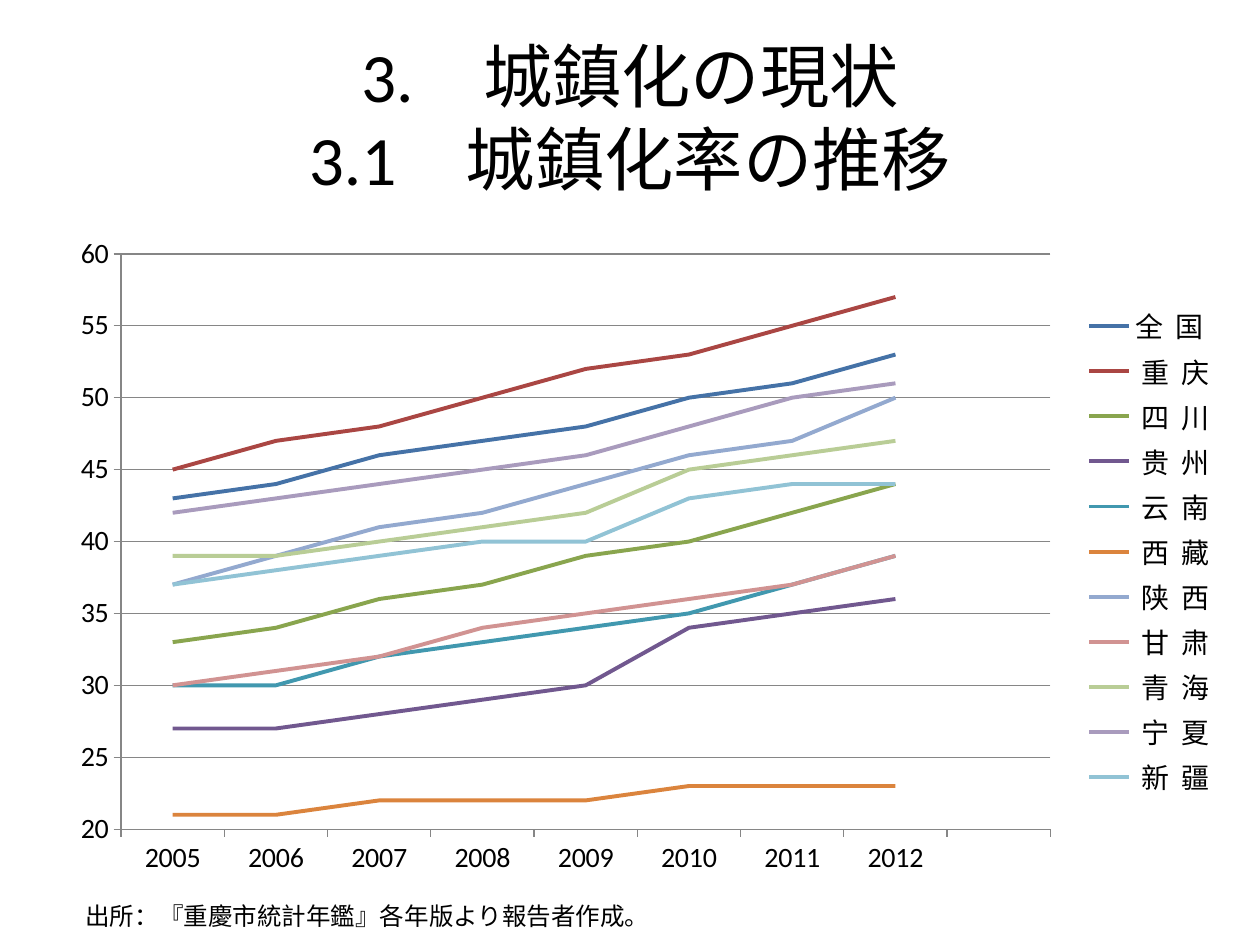
import pptx
import pptx.chart.data
import pptx.dml.color
import pptx.enum.chart
import pptx.enum.text
import pptx.oxml
import pptx.oxml.ns
import pptx.util

TITLE = "3.\u3000城鎮化の現状\v3.1\u3000城鎮化率の推移"
SOURCE = "出所：『重慶市統計年鑑』各年版より報告者作成。"
YEARS = [str(year) for year in range(2005, 2013)] + [""]
RATES = [
    ("全  国", "4572A7", (43, 44, 46, 47, 48, 50, 51, 53)),
    (" 重  庆", "AA4643", (45, 47, 48, 50, 52, 53, 55, 57)),
    (" 四  川", "89A54E", (33, 34, 36, 37, 39, 40, 42, 44)),
    (" 贵  州", "71588F", (27, 27, 28, 29, 30, 34, 35, 36)),
    (" 云  南", "4198AF", (30, 30, 32, 33, 34, 35, 37, 39)),
    (" 西  藏", "DB843D", (21, 21, 22, 22, 22, 23, 23, 23)),
    (" 陕  西", "93A9CF", (37, 39, 41, 42, 44, 46, 47, 50)),
    (" 甘  肃", "D19392", (30, 31, 32, 34, 35, 36, 37, 39)),
    (" 青  海", "B9CD96", (39, 39, 40, 41, 42, 45, 46, 47)),
    (" 宁  夏", "A99BBD", (42, 43, 44, 45, 46, 48, 50, 51)),
    (" 新  疆", "91C3D5", (37, 38, 39, 40, 40, 43, 44, 44)),
]

THEME = dict(font="Calibri", text="000000", axis="868686",
             title=39.6, chart=16, note=14, line=2.25, hair=0.75)
WIDTH, HEIGHT = 10, 7.5
MARGIN = WIDTH * 0.05
TITLE_BOX = (MARGIN, HEIGHT * 0.04, WIDTH - 2 * MARGIN, 1.25)
CHART_BOX = (MARGIN, 1.75, 9.22, 5.31)
NOTE_BOX = (0.58, 7.1, 8.66, 0.34)
PLOT_SHARE = (0.05, 0.05, 0.8, 0.86)
LEGEND_SHARE = (0.87, 0.12, 0.13, 0.75)


def inches(box):
    return [pptx.util.Inches(v) for v in box]


def color(code):
    return pptx.dml.color.RGBColor.from_string(code)


def style_font(font, size):
    font.name = THEME["font"]
    font.size = pptx.util.Pt(size)
    font.color.rgb = color(THEME["text"])


def style_line(line, code, width):
    line.color.rgb = color(code)
    line.width = pptx.util.Pt(width)


def add_text(s, box, text, size, align, anchor):
    tf = s.shapes.add_textbox(*inches(box)).text_frame
    tf.word_wrap = True
    tf.vertical_anchor = anchor
    p = tf.paragraphs[0]
    p.text = text
    p.alignment = align
    for r in p.runs:
        style_font(r.font, size)


def set_layout(element, share, inner=False):
    for old in element.findall(pptx.oxml.ns.qn("c:layout")):
        element.remove(old)
    target = '<c:layoutTarget val="inner"/>' if inner else ""
    modes = "".join(f'<c:{k}Mode val="edge"/>' for k in "xy")
    sizes = "".join(f'<c:{k} val="{v}"/>' for k, v in zip("xywh", share))
    layout = pptx.oxml.parse_xml(
        f'<c:layout {pptx.oxml.ns.nsdecls("c")}><c:manualLayout>'
        f'{target}{modes}{sizes}</c:manualLayout></c:layout>')
    element.insert(0 if inner else 1, layout)


def add_rate_chart(s):
    data = pptx.chart.data.CategoryChartData()
    data.categories = YEARS
    for name, _, values in RATES:
        data.add_series(name, values + (None,))
    chart = s.shapes.add_chart(
        pptx.enum.chart.XL_CHART_TYPE.LINE, *inches(CHART_BOX), data).chart
    style_font(chart.font, THEME["chart"])
    chart.has_title = False
    chart.has_legend = True
    chart.legend.position = pptx.enum.chart.XL_LEGEND_POSITION.RIGHT
    chart.legend.include_in_layout = False
    plot = chart.plots[0]
    plot.vary_by_categories = False
    for series, (_, code, _) in zip(plot.series, RATES):
        series.smooth = False
        series.marker.style = pptx.enum.chart.XL_MARKER_STYLE.NONE
        style_line(series.format.line, code, THEME["line"])
    for axis in (chart.category_axis, chart.value_axis):
        axis.major_tick_mark = pptx.enum.chart.XL_TICK_MARK.OUTSIDE
        axis.minor_tick_mark = pptx.enum.chart.XL_TICK_MARK.NONE
        style_line(axis.format.line, THEME["axis"], THEME["hair"])
    axis = chart.value_axis
    axis.minimum_scale, axis.maximum_scale, axis.major_unit = 20, 60, 5
    axis.has_major_gridlines = True
    style_line(axis.major_gridlines.format.line, THEME["axis"], THEME["hair"])
    plot_area = chart.element.find(".//" + pptx.oxml.ns.qn("c:plotArea"))
    legend = chart.element.find(".//" + pptx.oxml.ns.qn("c:legend"))
    set_layout(plot_area, PLOT_SHARE, inner=True)
    set_layout(legend, LEGEND_SHARE)


def main():
    prs = pptx.Presentation()
    prs.slide_width, prs.slide_height = inches((WIDTH, HEIGHT))
    s = prs.slides.add_slide(prs.slide_layouts[6])
    align, anchor = pptx.enum.text.PP_ALIGN, pptx.enum.text.MSO_ANCHOR
    add_text(s, TITLE_BOX, TITLE, THEME["title"], align.CENTER, anchor.MIDDLE)
    add_rate_chart(s)
    add_text(s, NOTE_BOX, SOURCE, THEME["note"], align.LEFT, anchor.TOP)
    prs.save("out.pptx")


if __name__ == "__main__":
    main()
